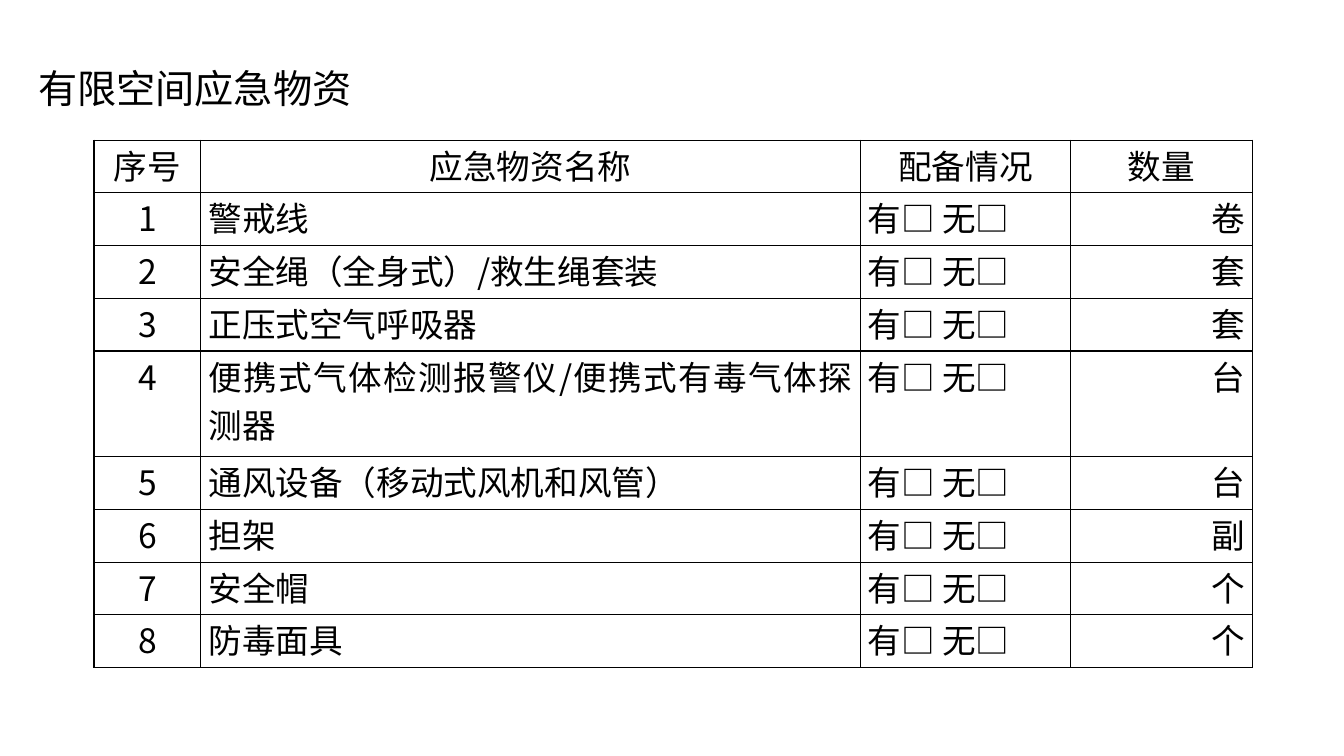
from lxml import etree
from pptx import Presentation
from pptx.dml.color import RGBColor
from pptx.enum.text import MSO_ANCHOR, MSO_AUTO_SIZE, PP_ALIGN
from pptx.oxml.ns import qn
from pptx.util import Pt

CENTER, JUSTIFY, RIGHT = PP_ALIGN.CENTER, PP_ALIGN.JUSTIFY, PP_ALIGN.RIGHT
TOP = MSO_ANCHOR.TOP
GROW = MSO_AUTO_SIZE.SHAPE_TO_FIT_TEXT

FONT = "Noto Sans CJK SC"
BLACK = "000000"
ROW_HEIGHT = 37.7
COLUMN_WIDTHS = [76.3, 470.9, 150.5, 129.6]
ALIGNMENTS = [CENTER, JUSTIFY, JUSTIFY, RIGHT]
HEADERS = ["序号", "应急物资名称", "配备情况", "数量"]
SUPPLIES = [
    ("警戒线", "卷"),
    ("安全绳（全身式）/救生绳套装", "套"),
    ("正压式空气呼吸器", "套"),
    ("便携式气体检测报警仪/便携式有毒气体探测器", "台"),
    ("通风设备（移动式风机和风管）", "台"),
    ("担架", "副"),
    ("安全帽", "个"),
    ("防毒面具", "个"),
]
TWO_LINE_ROW = 4


def color(value):
    """Return the colour for a hex string."""
    return RGBColor.from_string(value)


def write(tf, text, size, align=None):
    """Put one formatted paragraph in a text frame."""
    tf.text = text
    p = tf.paragraphs[0]
    p.alignment = align
    for r in p.runs:
        r.font.size = Pt(size)
        r.font.name = FONT
        r.font.color.rgb = color(BLACK)
        etree.SubElement(r.font._element, qn("a:ea"), typeface=FONT)


def add_title(slide, text):
    """Add the slide heading as a text box that grows with its text."""
    sp = slide.shapes.add_textbox(Pt(20.2), Pt(42.5), Pt(240.5), Pt(41))
    tf = sp.text_frame
    tf.word_wrap = False
    tf.auto_size = GROW
    write(tf, text, 28)


def add_borders(cell):
    """Draw a thin black line on each side of a cell."""
    tcPr = cell._tc.get_or_add_tcPr()
    for side in ("lnL", "lnR", "lnT", "lnB"):
        ln = etree.SubElement(tcPr, qn(f"a:{side}"), w=str(Pt(1)))
        fill = etree.SubElement(ln, qn("a:solidFill"))
        etree.SubElement(fill, qn("a:srgbClr"), val=BLACK)


def fill_cell(cell, text, align):
    """Write and style one table cell."""
    cell.margin_left = cell.margin_right = Pt(5.4)
    cell.margin_top = cell.margin_bottom = Pt(0)
    cell.vertical_anchor = TOP
    add_borders(cell)
    cell.fill.background()
    write(cell.text_frame, text, 24, align)


def add_supply_table(slide):
    """Add the checklist of emergency supplies."""
    rows = [HEADERS]
    for number, (name, unit) in enumerate(SUPPLIES, 1):
        rows.append([str(number), name, "有□ 无□", unit])
    heights = [ROW_HEIGHT] * len(rows)
    heights[TWO_LINE_ROW] *= 2
    table = slide.shapes.add_table(
        len(rows), len(HEADERS), Pt(67.2), Pt(100.1),
        Pt(sum(COLUMN_WIDTHS)), Pt(sum(heights))).table
    table.first_row = table.horz_banding = False
    for column, width in zip(table.columns, COLUMN_WIDTHS):
        column.width = Pt(width)
    for i, (row, height) in enumerate(zip(rows, heights)):
        table.rows[i].height = Pt(height)
        for j, text in enumerate(row):
            fill_cell(table.cell(i, j), text, ALIGNMENTS[j] if i else CENTER)


def main():
    """Build and save the slide."""
    prs = Presentation()
    prs.slide_width, prs.slide_height = Pt(960), Pt(540)
    slide = prs.slides.add_slide(prs.slide_layouts[6])
    add_title(slide, "有限空间应急物资")
    add_supply_table(slide)
    prs.save("out.pptx")


if __name__ == "__main__":
    main()
